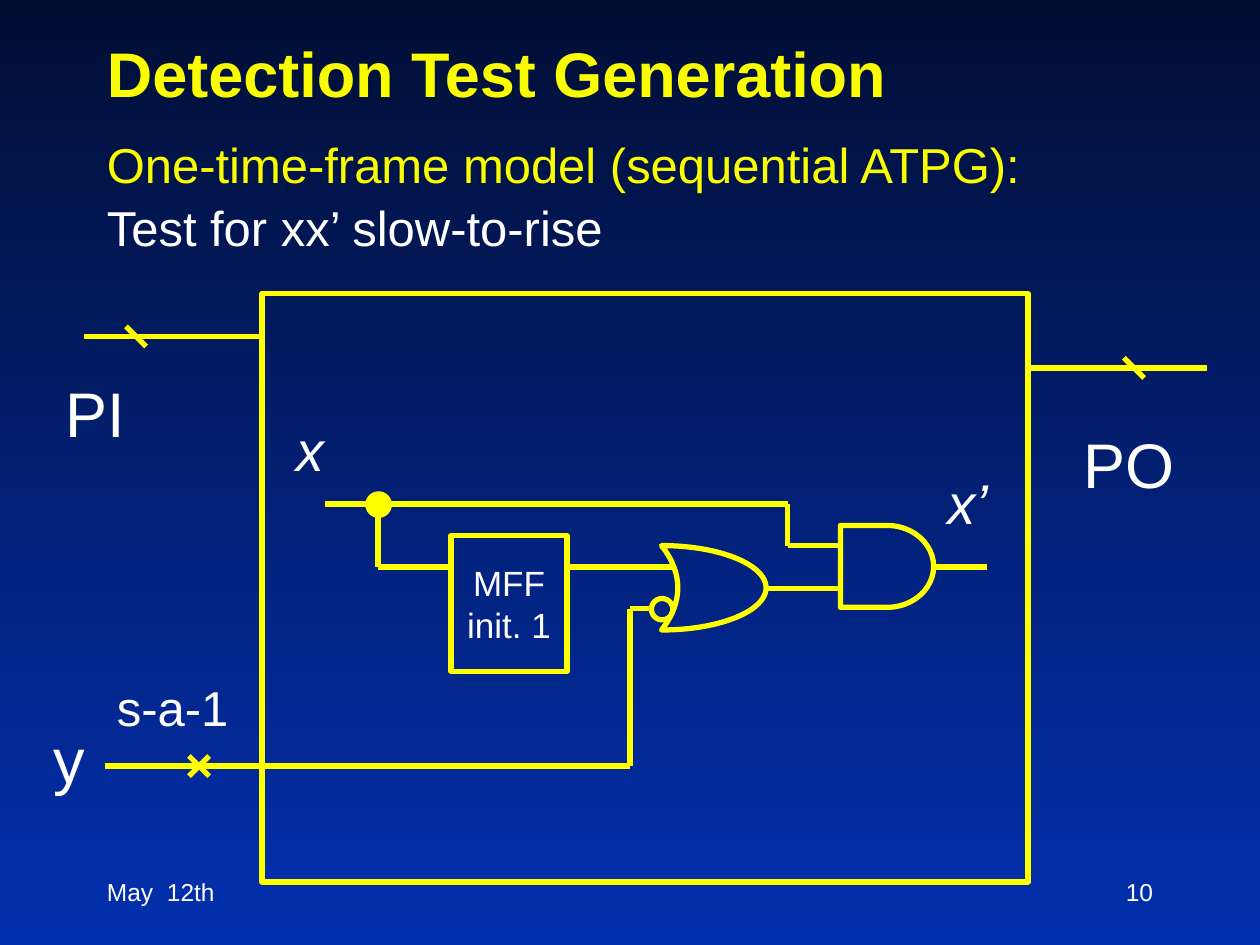
from pptx import Presentation
from pptx.dml.color import RGBColor
from pptx.enum.shapes import MSO_CONNECTOR, MSO_SHAPE
from pptx.enum.text import MSO_ANCHOR, PP_ALIGN
from pptx.oxml.ns import qn
from pptx.util import Inches, Pt
from lxml import etree

STRAIGHT = MSO_CONNECTOR.STRAIGHT
RECT, OVAL = MSO_SHAPE.RECTANGLE, MSO_SHAPE.OVAL
AND_GATE, OR_GATE = MSO_SHAPE.FLOWCHART_DELAY, MSO_SHAPE.MOON
NODE = MSO_SHAPE.FLOWCHART_CONNECTOR
TOP, MIDDLE, BOTTOM = MSO_ANCHOR.TOP, MSO_ANCHOR.MIDDLE, MSO_ANCHOR.BOTTOM
LEFT, CENTER, RIGHT = PP_ALIGN.LEFT, PP_ALIGN.CENTER, PP_ALIGN.RIGHT

FONT = "Arial"
COLORS = {
    "bg_top": "010E34",
    "bg_bottom": "0330AF",
    "heading": "FAFD00",
    "wire": "FFFF00",
    "text": "FFFFFF",
}


def rgb(name):
    return RGBColor.from_string(COLORS[name])


def set_background(slide):
    fill = slide.background.fill
    fill.gradient()
    fill.gradient_angle = 270
    for stop, pos, name in zip(fill.gradient_stops, (0, 1), ("bg_top", "bg_bottom")):
        stop.position = pos
        stop.color.rgb = rgb(name)


def format_paragraph(p, size, color="text", bold=False, italic=False, align=LEFT):
    p.alignment = align
    for r in p.runs:
        r.font.name = FONT
        r.font.size = Pt(size)
        r.font.bold = bold
        r.font.italic = italic
        r.font.color.rgb = rgb(color)


def add_text(slide, text, box, size, anchor=TOP, **style):
    tf = slide.shapes.add_textbox(*map(Inches, box)).text_frame
    tf.word_wrap = True
    tf.vertical_anchor = anchor
    tf.text = text
    for p in tf.paragraphs:
        format_paragraph(p, size, **style)
    return tf


def add_outline(slide, kind, box, filled=False):
    sp = slide.shapes.add_shape(kind, *map(Inches, box))
    sp.shadow.inherit = False
    if filled:
        sp.fill.solid()
        sp.fill.fore_color.rgb = rgb("wire")
    else:
        sp.fill.background()
    sp.line.color.rgb = rgb("wire")
    sp.line.width = Pt(3)
    return sp


def add_wire(slide, *points):
    """Draw straight segments through the given points."""
    for start, end in zip(points, points[1:]):
        line = slide.shapes.add_connector(STRAIGHT, *map(Inches, start + end))
        line.line.color.rgb = rgb("wire")
        line.line.width = Pt(3)
        etree.SubElement(line._element.spPr, qn("a:effectLst"))


def add_slash(slide, x, y, rising=False):
    """Draw a short diagonal mark centred on a wire."""
    d = 0.08
    dy = -d if rising else d
    add_wire(slide, (x - d, y - dy), (x + d, y + dy))


def add_circuit(slide):
    # Frame, flip-flop and gates
    add_outline(slide, RECT, (2.08, 2.33, 6.08, 4.67))
    add_outline(slide, AND_GATE, (6.67, 4.17, 0.74, 0.65))
    mff = add_outline(slide, RECT, (3.58, 4.25, 0.92, 1.08))
    tf = mff.text_frame
    tf.word_wrap = True
    tf.vertical_anchor = MIDDLE
    tf.text = "MFF init. 1"
    format_paragraph(tf.paragraphs[0], 20, align=CENTER)

    # Wires
    add_wire(slide, (0.67, 2.67), (2.08, 2.67))
    add_wire(slide, (8.17, 2.92), (9.58, 2.92))
    add_wire(slide, (2.58, 4), (6.25, 4), (6.25, 4.33), (6.67, 4.33))
    add_wire(slide, (3, 4), (3, 4.5), (3.58, 4.5))
    add_wire(slide, (4.5, 4.5), (5.33, 4.5))
    add_wire(slide, (0.83, 6.08), (5, 6.08), (5, 4.83), (5.17, 4.83))
    add_wire(slide, (6.08, 4.67), (6.67, 4.67))
    add_wire(slide, (7.42, 4.5), (7.83, 4.5))

    # Branch node, OR gate and its inverting input
    add_outline(slide, NODE, (2.92, 3.92, 0.17, 0.17), filled=True)
    or_gate = add_outline(slide, OR_GATE, (5.25, 4.33, 0.83, 0.67))
    or_gate.adjustments[0] = 0.844
    or_gate.rotation = 180
    add_outline(slide, OVAL, (5.17, 4.75, 0.17, 0.17))

    # Bus marks and the fault cross
    add_slash(slide, 1.08, 2.67)
    add_slash(slide, 9, 2.92)
    add_slash(slide, 1.58, 6.08)
    add_slash(slide, 1.58, 6.08, rising=True)


def add_labels(slide):
    add_text(slide, "PI", (0.42, 2.92, 0.75, 0.71), 36)
    add_text(slide, "PO", (8.5, 3.33, 1.08, 0.71), 36)
    add_text(slide, "y", (0.33, 5.67, 0.58, 0.71), 36)
    add_text(slide, "x", (2.25, 3.25, 0.83, 0.64), 32, italic=True)
    add_text(slide, "x’", (7.42, 3.67, 0.75, 0.64), 32, italic=True)
    add_text(slide, "s-a-1", (0.83, 5.33, 1.2, 0.57), 28)


def main():
    prs = Presentation()
    prs.slide_width, prs.slide_height = Inches(10), Inches(7.5)
    slide = prs.slides.add_slide(prs.slide_layouts[6])
    set_background(slide)

    # Headings
    add_text(slide, "Detection Test Generation", (0.75, 0.25, 8.5, 0.67), 36,
             BOTTOM, color="heading", bold=True)
    tf = add_text(slide, "One-time-frame model (sequential ATPG):\nTest for xx’ slow-to-rise",
                  (0.75, 1, 8.42, 1.08), 28, BOTTOM, color="heading")
    fault = tf.paragraphs[1]
    fault.space_before = Pt(2)
    format_paragraph(fault, 28)

    add_circuit(slide)
    add_labels(slide)

    # Footer
    add_text(slide, "May  12th", (0.75, 6.83, 2.08, 0.5), 14, MIDDLE)
    add_text(slide, "10", (7.17, 6.83, 2.08, 0.5), 14, MIDDLE, align=RIGHT)

    prs.save("out.pptx")


if __name__ == "__main__":
    main()
